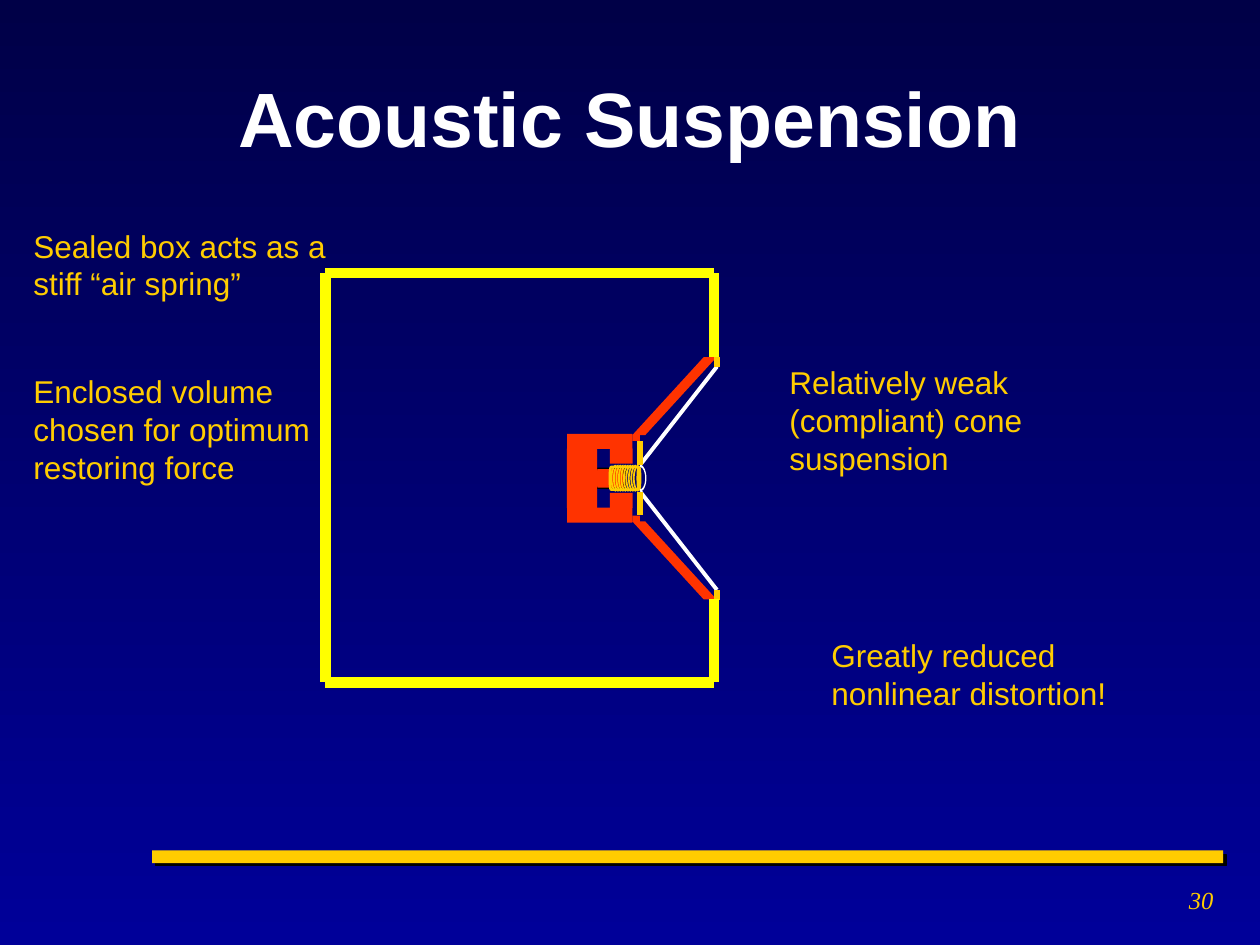
from math import cos, pi, sin

from lxml import etree
from pptx import Presentation
from pptx.dml.color import RGBColor
from pptx.enum.shapes import MSO_CONNECTOR, MSO_SHAPE
from pptx.enum.text import MSO_ANCHOR, PP_ALIGN
from pptx.oxml.ns import qn
from pptx.util import Pt

RECTANGLE, CAN, PARALLELOGRAM = MSO_SHAPE.RECTANGLE, MSO_SHAPE.CAN, MSO_SHAPE.PARALLELOGRAM
STRAIGHT = MSO_CONNECTOR.STRAIGHT
LEFT, CENTER, RIGHT = PP_ALIGN.LEFT, PP_ALIGN.CENTER, PP_ALIGN.RIGHT
TOP, MIDDLE = MSO_ANCHOR.TOP, MSO_ANCHOR.MIDDLE

NAVY = RGBColor(0x00, 0x00, 0x47)
BLUE = RGBColor(0x00, 0x00, 0x99)
BLACK = RGBColor(0x00, 0x00, 0x00)
WHITE = RGBColor(0xFF, 0xFF, 0xFF)
GOLD = RGBColor(0xFF, 0xCC, 0x00)
YELLOW = RGBColor(0xFF, 0xFF, 0x00)
RED = RGBColor(0xFF, 0x33, 0x00)

TITLE_FONT = {"name": "Arial", "size": Pt(44), "bold": True}
NOTE_FONT = {"name": "Arial", "size": Pt(18)}
NUMBER_FONT = {"name": "Times New Roman", "size": Pt(14), "italic": True}


def style(shape, fill=None, line=None, width=0.75):
    shape.shadow.inherit = False
    if fill is None:
        shape.fill.background()
    else:
        shape.fill.solid()
        shape.fill.fore_color.rgb = fill
    if line is None:
        shape.line.fill.background()
    else:
        shape.line.color.rgb = line
        shape.line.width = Pt(width)


def add_preset(shapes, kind, box, adjustment=None, **look):
    shape = shapes.add_shape(kind, *map(Pt, box))
    if adjustment is not None:
        shape.adjustments[0] = adjustment
    style(shape, **look)
    return shape


def add_line(shapes, start, end, color, width):
    line = shapes.add_connector(STRAIGHT, *map(Pt, start + end))
    line.line.color.rgb = color
    line.line.width = Pt(width)
    etree.SubElement(line._element.spPr, qn("a:effectLst"))


def arc_points(x, y, rx, ry, start, end, steps=12):
    """Points along an ellipse around (x, y); angles in radians."""
    angles = [start + (end - start) * i / steps for i in range(steps + 1)]
    return [(x + rx * cos(a), y + ry * sin(a)) for a in angles]


def add_outline(shapes, points, close, **look):
    in_emu = [(Pt(x), Pt(y)) for x, y in points]
    builder = shapes.build_freeform(*in_emu[0])
    builder.add_line_segments(in_emu[1:], close=close)
    style(builder.convert_to_shape(), **look)


def add_text(slide, box, paragraphs, font, color, align=LEFT, anchor=TOP, gap=0):
    frame = slide.shapes.add_textbox(*map(Pt, box)).text_frame
    frame.word_wrap = True
    frame.vertical_anchor = anchor
    for i, text in enumerate(paragraphs):
        paragraph = frame.add_paragraph() if i else frame.paragraphs[0]
        paragraph.text = text
        paragraph.alignment = align
        if i:
            paragraph.space_before = Pt(gap)
        for name, value in font.items():
            setattr(paragraph.font, name, value)
        paragraph.font.color.rgb = color


def add_background(slide):
    fill = slide.background.fill
    fill.gradient()
    fill.gradient_angle = 270
    for stop, color, position in zip(fill.gradient_stops, (NAVY, BLUE), (0, 1)):
        stop.color.rgb = color
        stop.position = position


def add_footer(slide, left, top, width):
    bar = slide.shapes.add_group_shape().shapes
    add_preset(bar, RECTANGLE, (left + 1.8, top + 2.6, width, 6), fill=BLACK, line=BLACK)
    add_preset(bar, RECTANGLE, (left, top, width, 7.2), fill=GOLD)
    add_text(slide, (left + 496, top + 16.4, 117.4, 37.4), ["30"], NUMBER_FONT, GOLD, RIGHT)


def add_voice_coil(shapes, left, axis):
    for turn in range(10):
        for start in (pi / 2, pi):
            points = arc_points(left + 1.42 * turn, axis, 2.7, 7.2, start, start + pi / 2)
            add_outline(shapes, points, False, line=GOLD, width=1)


def add_driver(slide, left, top, width, height):
    """Loudspeaker in section; the parts below its axis mirror those above."""
    shapes = slide.shapes.add_group_shape().shapes
    axis = top + height / 2
    neck, rim = left + 41.8, left + width

    pole = add_preset(shapes, CAN, (left + 19.4, axis - 8.65, 11.5, 17.3), 0.117,
                      fill=RED, line=BLACK)
    former = add_preset(shapes, CAN, (left + 26.6, axis - 8.65, 13, 17.3), 0.101,
                        line=GOLD, width=1.5)
    pole.rotation = former.rotation = 90
    add_voice_coil(shapes, left + 28.1, axis)

    add_preset(shapes, RECTANGLE, (left, axis - 17, 17.3, 34), fill=RED)
    red_parts = [  # x, distance of the near edge from the axis, width, height
        (24.5, 8.4, 13, 8.6),
        (0, 16.8, 37.4, 8.6),
        (37.4, 21.4, 4.3, 3.6),
    ]
    for side in (-1, 1):
        for x, near, part_width, part_height in red_parts:
            y = axis + side * (near + part_height / 2) - part_height / 2
            add_preset(shapes, RECTANGLE, (left + x, y, part_width, part_height), fill=RED)
        neck_end = (neck, axis + side * 7.6)
        rim_end = (rim, axis + side * 63.8)
        add_line(shapes, neck_end, rim_end, WHITE, 2.25)
        basket_top = top if side < 0 else top + height - 44.6
        basket = add_preset(shapes, PARALLELOGRAM, (left + 37.4, basket_top, 48.2, 44.6),
                            0.915, fill=RED)
        if side > 0:
            basket._element.spPr.find(qn("a:xfrm")).set("flipV", "1")
        add_line(shapes, neck_end, (neck, axis + side * 21.2), GOLD, 3)
        add_line(shapes, rim_end, (rim, axis + side * height / 2), GOLD, 3)

    dust_cap = (arc_points(neck, axis, 3.6, 7.6, -pi / 2, pi / 2)
                + arc_points(neck, axis, 2.9, 6.3, pi / 2, -pi / 2))
    add_outline(shapes, dust_cap, True, fill=WHITE)


def add_enclosure(slide, left, top, width, height, opening_top, opening_bottom):
    shapes = slide.shapes.add_group_shape().shapes
    right, bottom = left + width, top + height
    walls = [
        ((right, opening_top), (right, top)),
        ((right, bottom), (right, opening_bottom)),
        ((left, top), (left, bottom)),
        ((left, top), (right, top)),
        ((left, bottom), (right, bottom)),
    ]
    for start, end in walls:
        add_line(shapes, start, end, YELLOW, 6)


def add_notes_around_box(slide):
    notes = [
        ((12, 126, 192, 158.4), ["Sealed box acts as a stiff “air spring”",
                                 "Enclosed volume chosen for optimum restoring force"]),
        ((444, 204, 192, 72), ["Relatively weak (compliant) cone suspension"]),
        ((468, 360, 192, 51), ["Greatly reduced nonlinear distortion!"]),
    ]
    for box, paragraphs in notes:
        add_text(slide, box, paragraphs, NOTE_FONT, GOLD, gap=40)


def main():
    deck = Presentation()
    deck.slide_width, deck.slide_height = Pt(720), Pt(540)
    slide = deck.slides.add_slide(deck.slide_layouts[6])
    add_background(slide)
    add_footer(slide, 87, 486, 612)
    add_text(slide, (36, 21.6, 648, 90), ["Acoustic Suspension"], TITLE_FONT, WHITE,
             CENTER, MIDDLE)
    add_driver(slide, 324, 204, 85.7, 138.6)
    add_enclosure(slide, 186, 156, 222, 234, 204, 342)
    add_notes_around_box(slide)
    deck.save("out.pptx")


if __name__ == "__main__":
    main()
